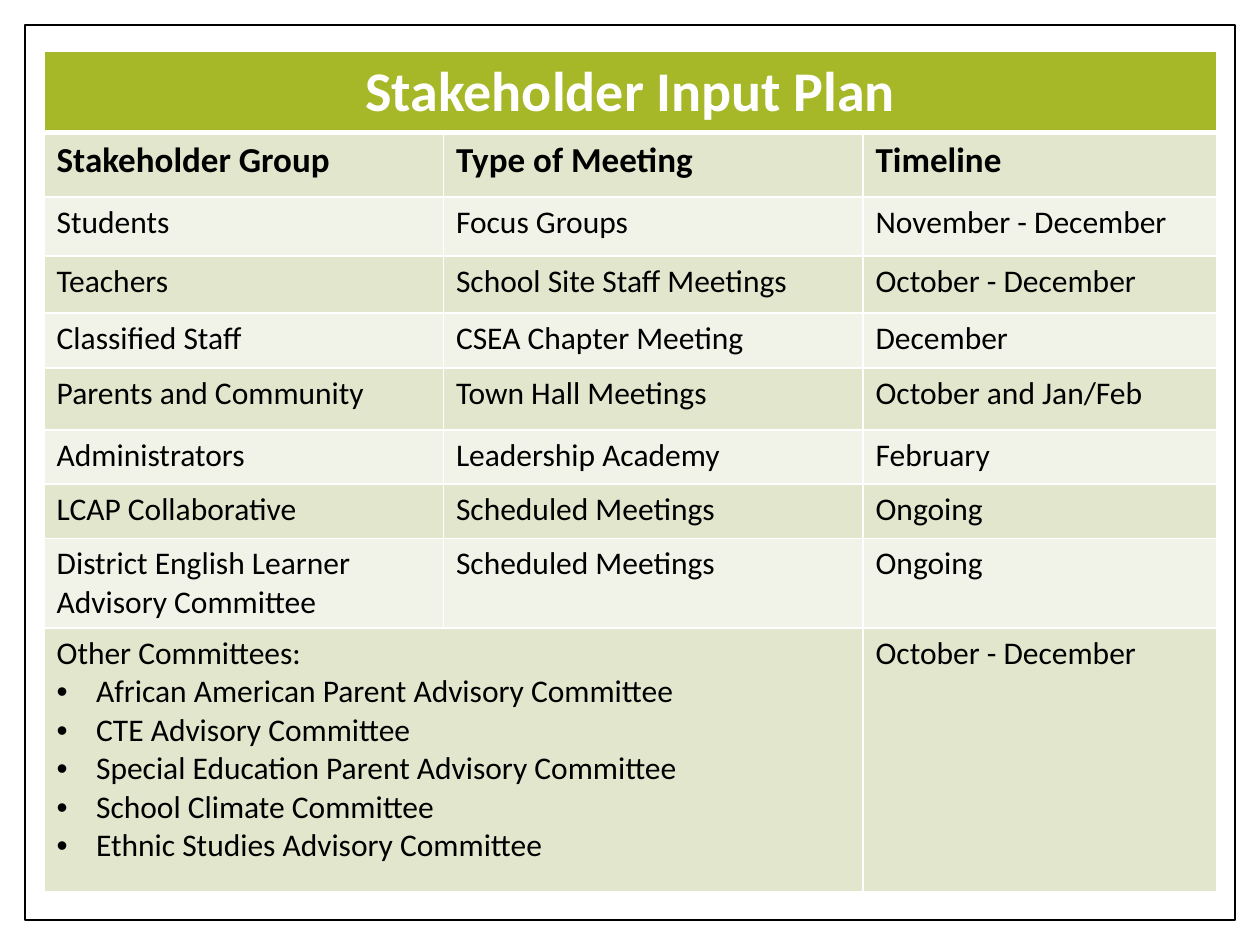
import pptx
import pptx.dml.color
import pptx.enum.shapes
import pptx.enum.text
import pptx.oxml
import pptx.oxml.ns
import pptx.util

Pt = pptx.util.Pt
NS = pptx.oxml.ns.nsdecls("a")


def color(text):
    return pptx.dml.color.RGBColor.from_string(text)


def edge(cell, side, width):
    props = cell._tc.get_or_add_tcPr()
    line = pptx.oxml.parse_xml(
        f'<a:ln{side} {NS} w="{Pt(width)}"><a:solidFill>'
        f'<a:srgbClr val="FFFFFF"/></a:solidFill></a:ln{side}>')
    props.insert("LRTB".index(side), line)


deck = pptx.Presentation()
deck.slide_width, deck.slide_height = Pt(720), Pt(540)
slide = deck.slides.add_slide(deck.slide_layouts[6])

frame = slide.shapes.add_shape(
    pptx.enum.shapes.MSO_SHAPE.RECTANGLE, Pt(14.4), Pt(14.4), Pt(691.2), Pt(511.2))
frame.shadow.inherit = False
frame.fill.solid()
frame.fill.fore_color.rgb = color("FFFFFF")
frame.line.color.rgb = color("000000")
frame.line.width = Pt(1)

other = [
    "Other Committees:",
    "African American Parent Advisory Committee",
    "CTE Advisory Committee",
    "Special Education Parent Advisory Committee",
    "School Climate Committee",
    "Ethnic Studies Advisory Committee",
]
data = [
    ("Stakeholder Input Plan", "", ""),
    ("Stakeholder Group", "Type of Meeting", "Timeline"),
    ("Students", "Focus Groups", "November - December"),
    ("Teachers", "School Site Staff Meetings", "October - December"),
    ("Classified Staff", "CSEA Chapter Meeting", "December"),
    ("Parents and Community", "Town Hall Meetings", "October and Jan/Feb"),
    ("Administrators", "Leadership Academy", "February"),
    ("LCAP Collaborative", "Scheduled Meetings", "Ongoing"),
    ("District English Learner Advisory Committee", "Scheduled Meetings", "Ongoing"),
    ("\n".join(other), "", "October - December"),
]
widths = [228.2, 239.8, 202.3]
heights = [44.6, 36.7, 33.8, 32.4, 31.7, 35.3, 31, 31, 49, 150.5]

title = {"size": Pt(32), "bold": True, "color": "FFFFFF"}
head = {"size": Pt(20), "bold": True, "color": "000000"}
body = {"size": Pt(18), "bold": False, "color": "000000"}

table = slide.shapes.add_table(
    len(data), len(widths), Pt(25.2), Pt(29.5), Pt(sum(widths)), Pt(sum(heights))).table
for col, width in zip(table.columns, widths):
    col.width = Pt(width)
for row, height in zip(table.rows, heights):
    row.height = Pt(height)
table.cell(0, 0).merge(table.cell(0, 2))
table.cell(9, 0).merge(table.cell(9, 1))

for r, words in enumerate(data):
    look = (title, head)[r] if r < 2 else body
    shade = "A6B727" if r == 0 else ("F1F3E8", "E1E6CD")[r % 2]
    for c, text in enumerate(words):
        cell = table.cell(r, c)
        cell.fill.solid()
        cell.fill.fore_color.rgb = color(shade)
        for side in "LRTB":
            thick = (r, side) in ((0, "B"), (1, "T"))
            edge(cell, side, 3 if thick else 1)
        if cell.is_spanned:
            continue
        cell.text = text
        for para in cell.text_frame.paragraphs:
            font = para.runs[0].font
            font.name = "Calibri"
            for key, value in look.items():
                if key == "color":
                    font.color.rgb = color(value)
                else:
                    setattr(font, key, value)

table.cell(0, 0).text_frame.paragraphs[0].alignment = pptx.enum.text.PP_ALIGN.CENTER
for para in table.cell(9, 0).text_frame.paragraphs[1:]:
    props = para._p.get_or_add_pPr()
    props.set("marL", str(Pt(22.5)))
    props.set("indent", str(-Pt(22.5)))
    props.append(pptx.oxml.parse_xml(f'<a:buFont {NS} typeface="Arial"/>'))
    props.append(pptx.oxml.parse_xml(f'<a:buChar {NS} char="•"/>'))

deck.save("out.pptx")
